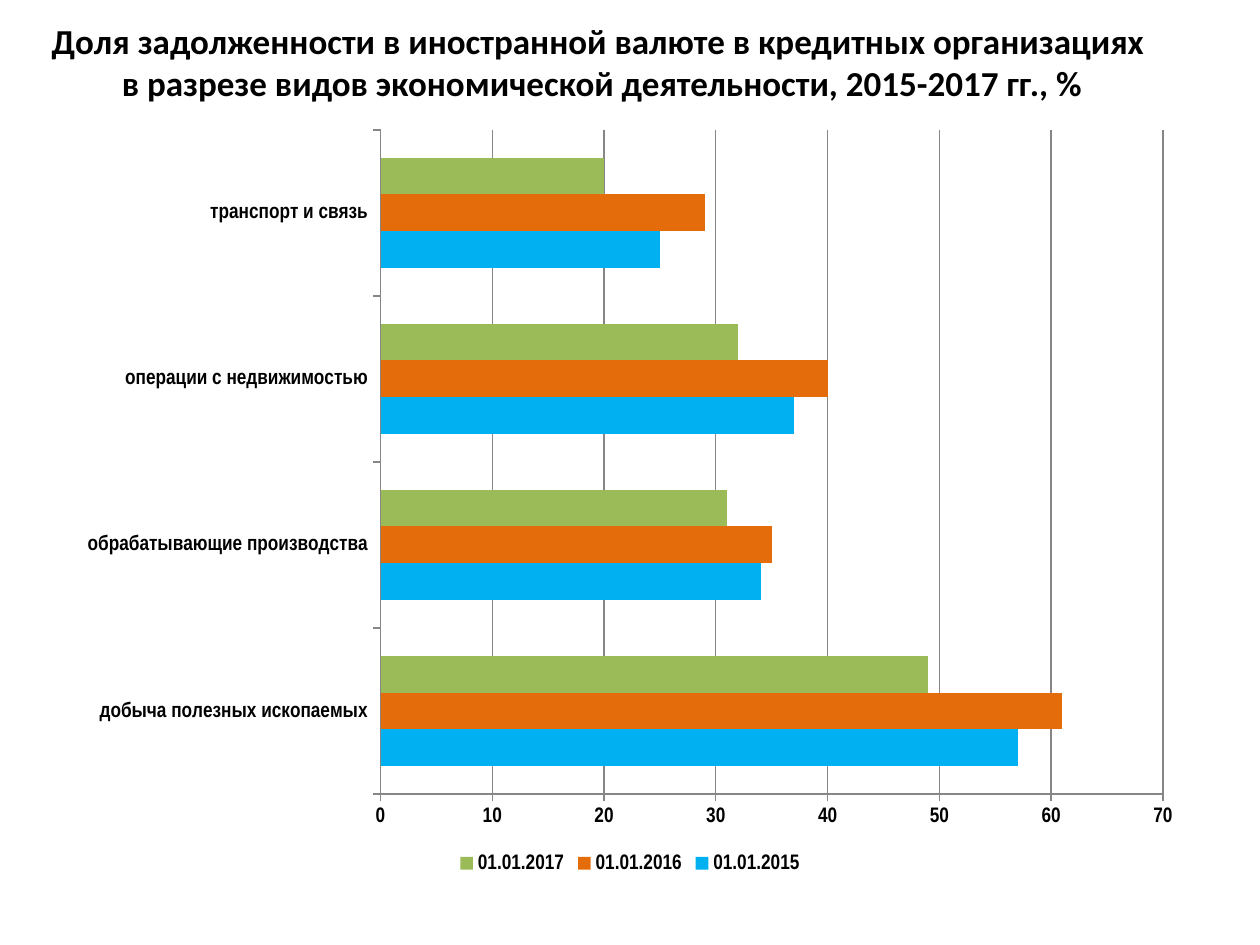
import pptx
import pptx.chart.data
import pptx.dml.color
import pptx.enum.chart
import pptx.enum.text
import pptx.oxml
import pptx.util
from pptx.util import Inches

TITLE = ("Доля задолженности в иностранной валюте в кредитных организациях \n"
         "в разрезе видов экономической деятельности, 2015-2017 гг., %")
ACTIVITIES = ["добыча полезных ископаемых", "обрабатывающие производства",
              "операции с недвижимостью", "транспорт и связь"]
SHARES = [
    ("01.01.2015", (57, 34, 37, 25), "00B0F0"),
    ("01.01.2016", (61, 35, 40, 29), "E46C0A"),
    ("01.01.2017", (49, 31, 32, 20), "9BBB59"),
]
THEME = {"ink": "000000", "grid": "868686", "title_font": "Calibri", "title_size": 20,
         "label_font": "Arial Narrow", "label_size": 12}
PLOT_AREA = {"x": 0.28, "y": 0.02, "w": 0.69, "h": 0.87}


def rgb(value):
    return pptx.dml.color.RGBColor.from_string(value)


def style_font(font, name, size):
    font.name, font.size, font.bold = name, pptx.util.Pt(size), True
    font.color.rgb = rgb(THEME["ink"])


def add_text(slide, text, *, box, font, size, align):
    frame = slide.shapes.add_textbox(*map(Inches, box)).text_frame
    frame.word_wrap = True
    frame.vertical_anchor = pptx.enum.text.MSO_ANCHOR.MIDDLE
    paragraph = frame.paragraphs[0]
    paragraph.text = text
    paragraph.alignment = align
    for run in paragraph.runs:
        style_font(run.font, font, size)


def style_line(line):
    line.color.rgb = rgb(THEME["grid"])
    line.width = pptx.util.Pt(0.75)


def fix_plot_area(chart):
    modes = '<c:layoutTarget val="inner"/><c:xMode val="edge"/><c:yMode val="edge"/>'
    sizes = "".join(f'<c:{key} val="{value}"/>' for key, value in PLOT_AREA.items())
    layout = pptx.oxml.parse_xml(
        '<c:layout xmlns:c="http://schemas.openxmlformats.org/drawingml/2006/chart">'
        f"<c:manualLayout>{modes}{sizes}</c:manualLayout></c:layout>")
    plot_area = chart._chartSpace.chart.plotArea
    for previous in plot_area.xpath("c:layout"):
        plot_area.remove(previous)
    plot_area.insert(0, layout)


def add_shares_chart(slide, box):
    data = pptx.chart.data.CategoryChartData(number_format="General")
    data.categories = ACTIVITIES
    for date, values, _ in SHARES:
        data.add_series(date, values)
    chart = slide.shapes.add_chart(
        pptx.enum.chart.XL_CHART_TYPE.BAR_CLUSTERED, *map(Inches, box), data).chart
    chart.has_title = False
    style_font(chart.font, THEME["label_font"], THEME["label_size"])

    bars = chart.plots[0]
    bars.gap_width, bars.overlap, bars.vary_by_categories = 150, 0, False
    for series, (_, _, color) in zip(bars.series, SHARES):
        series.format.fill.solid()
        series.format.fill.fore_color.rgb = rgb(color)
        series.invert_if_negative = False

    for axis in (chart.category_axis, chart.value_axis):
        axis.major_tick_mark = pptx.enum.chart.XL_TICK_MARK.OUTSIDE
        axis.minor_tick_mark = pptx.enum.chart.XL_TICK_MARK.NONE
        style_line(axis.format.line)
        style_font(axis.tick_labels.font, THEME["label_font"], THEME["label_size"])
    shares = chart.value_axis
    shares.minimum_scale, shares.maximum_scale, shares.major_unit = 0, 70, 10
    shares.has_major_gridlines = True
    style_line(shares.major_gridlines.format.line)

    chart.has_legend = True
    chart.legend.position = pptx.enum.chart.XL_LEGEND_POSITION.BOTTOM
    chart.legend.include_in_layout = False
    style_font(chart.legend.font, THEME["label_font"], THEME["label_size"])
    fix_plot_area(chart)


def main():
    """Build the slide on foreign-currency debt shares by economic activity."""
    deck = pptx.Presentation()
    deck.slide_width, deck.slide_height = Inches(10), Inches(7.5)
    slide = deck.slides.add_slide(deck.slide_layouts[6])
    add_text(slide, TITLE, box=(0.28, 0.13, 9, 0.71), font=THEME["title_font"],
             size=THEME["title_size"], align=pptx.enum.text.PP_ALIGN.CENTER)
    add_shares_chart(slide, (0.5, 0.91, 9, 6.06))
    deck.save("out.pptx")


if __name__ == "__main__":
    main()
